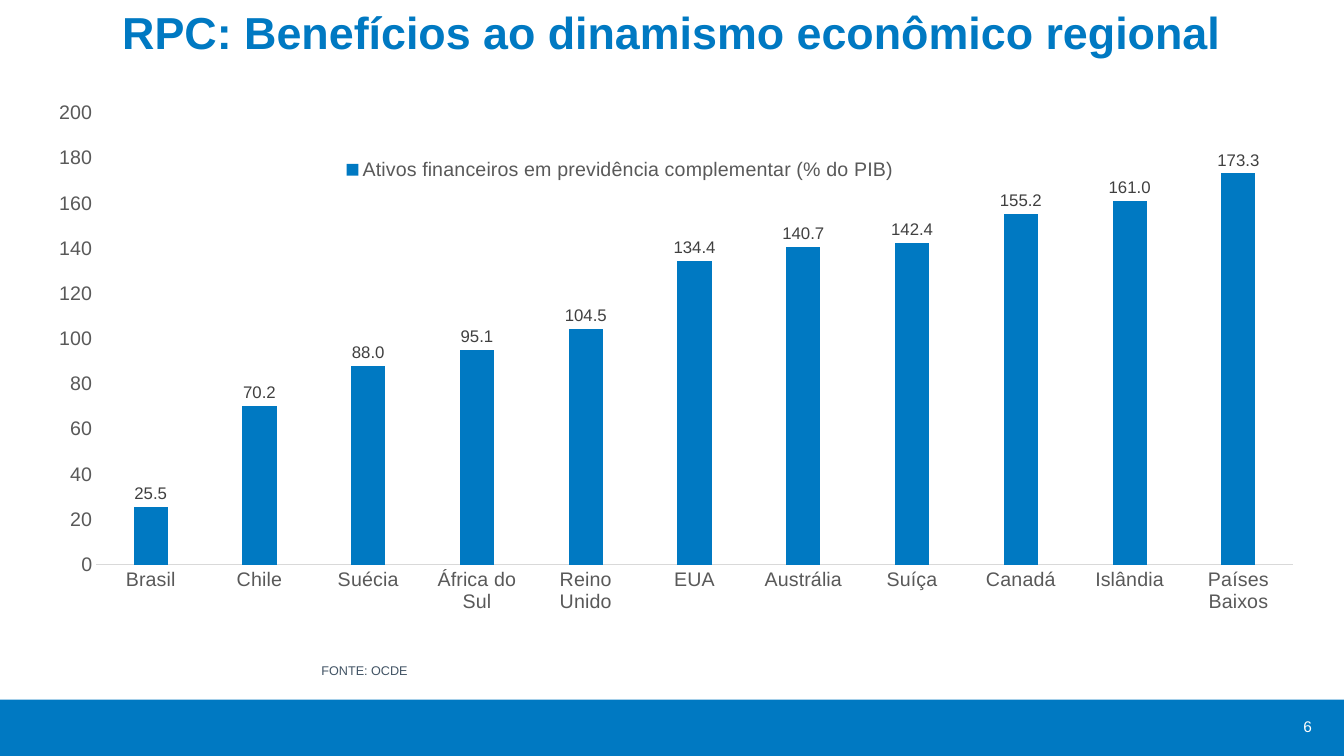
"""Build a slide comparing pension assets as a share of GDP by country."""
from lxml import etree
from pptx import Presentation
from pptx.chart.data import CategoryChartData
from pptx.dml.color import RGBColor
from pptx.enum.chart import XL_CHART_TYPE, XL_LABEL_POSITION, XL_LEGEND_POSITION, XL_TICK_MARK
from pptx.enum.shapes import MSO_SHAPE
from pptx.enum.text import MSO_ANCHOR, PP_ALIGN
from pptx.oxml.ns import qn
from pptx.util import Inches, Pt

TITLE = "RPC: Benefícios ao dinamismo econômico regional"
SOURCE = "FONTE: OCDE"
PAGE = "6"
SERIES = "Ativos financeiros em previdência complementar (% do PIB)"
ASSETS = {
    "Brasil": 25.5, "Chile": 70.2, "Suécia": 88, "África do Sul": 95.1,
    "Reino Unido": 104.5, "EUA": 134.4, "Austrália": 140.7, "Suíça": 142.4,
    "Canadá": 155.2, "Islândia": 161, "Países Baixos": 173.3,
}
THEME = {
    "font": "Arial",
    "blue": "0079C2", "white": "FFFFFF", "slate": "415364",
    "axis_text": "595959", "label_text": "404040", "axis_line": "D9D9D9",
    "title": 32, "axis": 14, "label": 12, "page": 11, "source": 9,
}
WIDTH, HEIGHT, FOOTER_HEIGHT = 13.33, 7.5, 0.56
PLOT_BOX = (0.055, 0.021, 0.925, 0.785)
LEGEND_BOX = (0.235, 0.09, 0.45, 0.06)


def color(name):
    return RGBColor.from_string(THEME[name])


def style_font(font, size, ink, bold=False):
    for attribute, value in {"name": THEME["font"], "size": Pt(THEME[size]), "bold": bold}.items():
        setattr(font, attribute, value)
    font.color.rgb = color(ink)


def add_text(slide, text, box, size, ink, align=PP_ALIGN.LEFT, anchor=MSO_ANCHOR.TOP,
             bold=False, spacing=1.0):
    frame = slide.shapes.add_textbox(*map(Inches, box)).text_frame
    frame.word_wrap = True
    frame.vertical_anchor = anchor
    paragraph = frame.paragraphs[0]
    paragraph.alignment = align
    paragraph.line_spacing = spacing
    run = paragraph.add_run()
    run.text = text
    style_font(run.font, size, ink, bold)


def make_layout(box, inner=False):
    layout = etree.Element(qn("c:layout"))
    manual = etree.SubElement(layout, qn("c:manualLayout"))
    settings = [("layoutTarget", "inner")] if inner else []
    settings += [("xMode", "edge"), ("yMode", "edge"), *zip("xywh", map(str, box))]
    for tag, value in settings:
        etree.SubElement(manual, qn(f"c:{tag}")).set("val", value)
    return layout


def add_assets_chart(slide):
    assets = CategoryChartData(number_format="#,##0.0")
    assets.categories = list(ASSETS)
    assets.add_series(SERIES, list(ASSETS.values()))
    chart = slide.shapes.add_chart(
        XL_CHART_TYPE.COLUMN_CLUSTERED, *map(Inches, (0.25, 1, 12.83, 5.71)), assets).chart
    chart.has_title = False
    style_font(chart.font, "axis", "axis_text")

    countries, percent = chart.category_axis, chart.value_axis
    for axis in (countries, percent):
        axis.major_tick_mark = axis.minor_tick_mark = XL_TICK_MARK.NONE
        axis.has_major_gridlines = False
        style_font(axis.tick_labels.font, "axis", "axis_text")
    countries.format.line.color.rgb = color("axis_line")
    countries.format.line.width = Pt(0.75)
    percent.format.line.fill.background()
    for attribute, value in {"minimum_scale": 0, "maximum_scale": 200, "major_unit": 20}.items():
        setattr(percent, attribute, value)
    percent.tick_labels.number_format = "General"
    percent.tick_labels.number_format_is_linked = False

    columns = chart.plots[0]
    columns.gap_width = 219
    columns.vary_by_categories = False
    fill = columns.series[0].format.fill
    fill.solid()
    fill.fore_color.rgb = color("blue")
    columns.has_data_labels = True
    labels = columns.data_labels
    for attribute, value in {"show_value": True, "number_format": "#,##0.0",
                             "number_format_is_linked": False,
                             "position": XL_LABEL_POSITION.OUTSIDE_END}.items():
        setattr(labels, attribute, value)
    style_font(labels.font, "label", "label_text")

    chart.has_legend = True
    legend = chart.legend
    legend.position = XL_LEGEND_POSITION.BOTTOM
    legend.include_in_layout = False
    style_font(legend.font, "axis", "axis_text")

    space = chart.element
    for layout in list(space.iter(qn("c:layout"))):
        layout.getparent().remove(layout)
    next(space.iter(qn("c:plotArea"))).insert(0, make_layout(PLOT_BOX, inner=True))
    next(space.iter(qn("c:legendPos"))).addnext(make_layout(LEGEND_BOX))


def main():
    deck = Presentation()
    deck.slide_width, deck.slide_height = Inches(WIDTH), Inches(HEIGHT)
    slide = deck.slides.add_slide(deck.slide_layouts[6])

    footer = slide.shapes.add_shape(
        MSO_SHAPE.RECTANGLE, 0, Inches(HEIGHT - FOOTER_HEIGHT), Inches(WIDTH), Inches(FOOTER_HEIGHT))
    footer.shadow.inherit = False
    footer.fill.solid()
    footer.fill.fore_color.rgb = color("blue")
    footer.line.fill.background()

    add_text(slide, PAGE, (11.67, 7.03, 1.44, 0.36), "page", "white",
             PP_ALIGN.RIGHT, MSO_ANCHOR.MIDDLE)
    add_text(slide, SOURCE, (3.09, 6.53, 10.24, 0.25), "source", "slate")
    add_text(slide, TITLE, (0, 0.06, WIDTH, 0.7), "title", "blue",
             PP_ALIGN.CENTER, bold=True, spacing=0.9)
    add_assets_chart(slide)
    deck.save("out.pptx")


if __name__ == "__main__":
    main()
